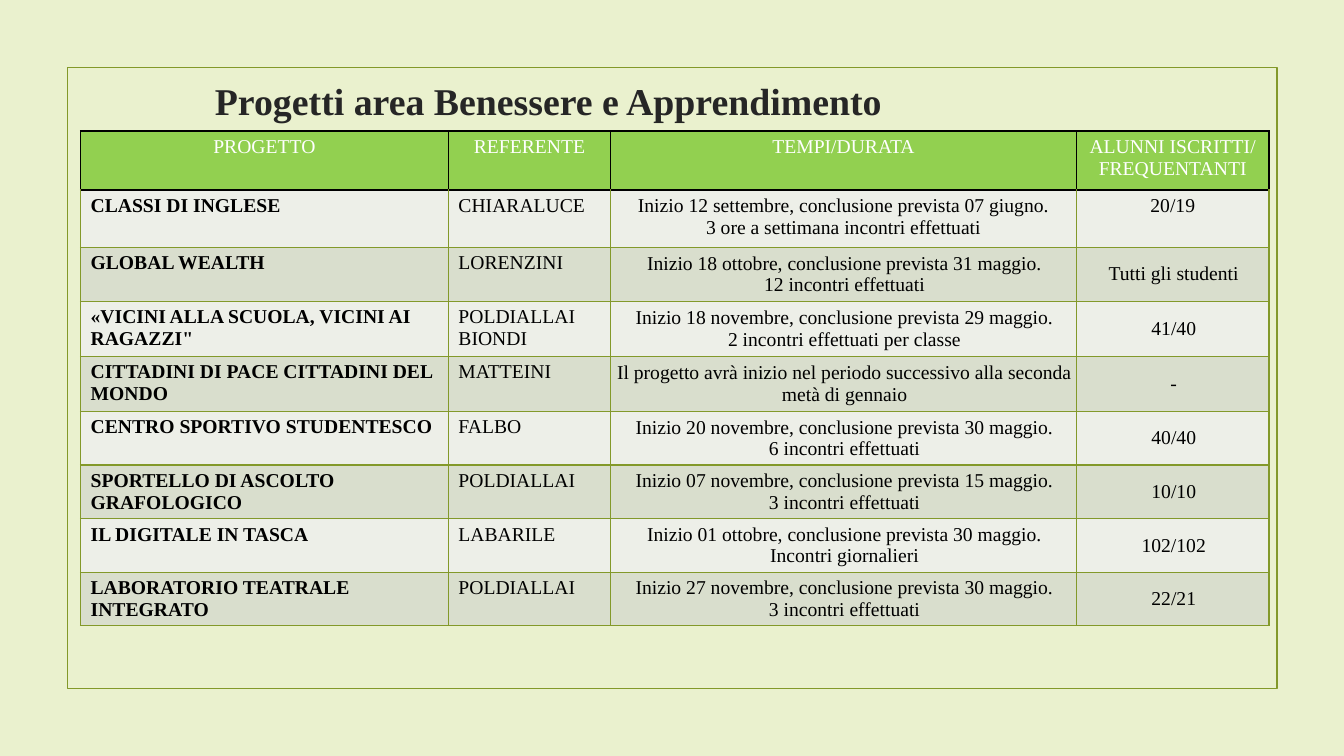
from pptx import Presentation
from pptx import util as u
from pptx.dml import color
from pptx.enum import shapes, text
from pptx.oxml import parse_xml
from pptx.oxml.ns import nsdecls

FONT = "Times New Roman"
GREEN, BLACK, WHITE = "83992A", "000000", "FFFFFF"
HEADER_FILL, BAND_FILLS = "92D050", ("EDEFE8", "D9DECD")
COLUMN_WIDTHS = (9.27, 4.09, 11.74, 4.85)
ROW_HEIGHTS = (1.49, 1.44, 1.36, 1.39, 1.39, 1.35, 1.35, 1.35, 1.35)
HEADERS = ("PROGETTO", "REFERENTE", "TEMPI/DURATA", "ALUNNI ISCRITTI/\nFREQUENTANTI")
PROJECTS = (
    ("CLASSI DI INGLESE", "CHIARALUCE",
     "Inizio 12 settembre, conclusione prevista 07 giugno.\n3 ore a settimana incontri effettuati", "20/19"),
    ("GLOBAL WEALTH", "LORENZINI",
     "Inizio 18 ottobre, conclusione prevista 31 maggio.\n12 incontri effettuati", "Tutti gli studenti"),
    ("«VICINI ALLA SCUOLA, VICINI AI RAGAZZI\"", "POLDIALLAI\nBIONDI",
     "Inizio 18 novembre, conclusione prevista 29 maggio.\n2 incontri effettuati per classe", "41/40"),
    ("CITTADINI DI PACE CITTADINI DEL MONDO", "MATTEINI",
     "Il progetto avrà inizio nel periodo successivo alla seconda metà di gennaio", "-"),
    ("CENTRO SPORTIVO STUDENTESCO", "FALBO",
     "Inizio 20 novembre, conclusione prevista 30 maggio.\n6 incontri effettuati", "40/40"),
    ("SPORTELLO DI ASCOLTO GRAFOLOGICO", "POLDIALLAI",
     "Inizio 07 novembre, conclusione prevista 15 maggio.\n3 incontri effettuati", "10/10"),
    ("IL DIGITALE IN TASCA", "LABARILE",
     "Inizio 01 ottobre, conclusione prevista 30 maggio. Incontri giornalieri", "102/102"),
    ("LABORATORIO TEATRALE INTEGRATO", "POLDIALLAI",
     "Inizio 27 novembre, conclusione prevista 30 maggio.\n3 incontri effettuati", "22/21"),
)


def rgb(hex_color):
    return color.RGBColor.from_string(hex_color)


def format_text(text_frame, size, hex_color, bold, centered):
    for paragraph in text_frame.paragraphs:
        paragraph.alignment = text.PP_ALIGN.CENTER if centered else text.PP_ALIGN.LEFT
        for run in paragraph.runs:
            run.font.name = FONT
            run.font.size = u.Pt(size)
            run.font.bold = bold
            run.font.color.rgb = rgb(hex_color)


def set_borders(cell, hex_color, top_color):
    """Draw 1 pt borders; they must precede the fill in the cell properties."""
    properties = cell._tc.get_or_add_tcPr()
    for position, side in enumerate(("lnL", "lnR", "lnT", "lnB")):
        side_color = top_color if side == "lnT" else hex_color
        properties.insert(position, parse_xml(
            f'<a:{side} {nsdecls("a")} w="12700"><a:solidFill>'
            f'<a:srgbClr val="{side_color}"/></a:solidFill></a:{side}>'))


def add_frame(slide, left, top, width, height):
    frame = slide.shapes.add_shape(
        shapes.MSO_SHAPE.RECTANGLE, u.Cm(left), u.Cm(top), u.Cm(width), u.Cm(height))
    frame.shadow.inherit = False
    frame.fill.background()
    frame.line.color.rgb = rgb(GREEN)
    frame.line.width = u.Pt(1.25)


def add_title(slide, left, top, width, height):
    title = slide.shapes.title
    title.left, title.top = u.Cm(left), u.Cm(top)
    title.width, title.height = u.Cm(width), u.Cm(height)
    title.text_frame.text = "Progetti area Benessere e Apprendimento"
    title.text_frame.vertical_anchor = text.MSO_ANCHOR.MIDDLE
    format_text(title.text_frame, 27, "262626", True, True)


def fill_cell(cell, content, row, column):
    is_header = row == 0
    cell.text_frame.text = content
    cell.fill.solid()
    cell.fill.fore_color.rgb = rgb(HEADER_FILL if is_header else BAND_FILLS[(row - 1) % 2])
    set_borders(cell, BLACK if is_header else GREEN, BLACK if row <= 1 else GREEN)
    format_text(cell.text_frame, 14, WHITE if is_header else BLACK,
                bold=not is_header and column == 0, centered=is_header or column >= 2)
    if row >= 2 and column >= 2:
        cell.vertical_anchor = text.MSO_ANCHOR.MIDDLE
        cell.margin_left, cell.margin_right = u.Cm(0.1), u.Cm(0.05)


def add_project_table(slide, left, top):
    rows = (HEADERS, *PROJECTS)
    table = slide.shapes.add_table(
        len(rows), len(HEADERS), u.Cm(left), u.Cm(top),
        u.Cm(sum(COLUMN_WIDTHS)), u.Cm(sum(ROW_HEIGHTS))).table
    for column, width in zip(table.columns, COLUMN_WIDTHS):
        column.width = u.Cm(width)
    for row, height in zip(table.rows, ROW_HEIGHTS):
        row.height = u.Cm(height)
    for row, contents in enumerate(rows):
        for column, content in enumerate(contents):
            fill_cell(table.cell(row, column), content, row, column)


def main():
    presentation = Presentation()
    presentation.slide_width, presentation.slide_height = u.Cm(33.87), u.Cm(19.05)
    slide = presentation.slides.add_slide(presentation.slide_layouts[5])
    slide.background.fill.solid()
    slide.background.fill.fore_color.rgb = rgb("EAF1CE")
    add_frame(slide, 1.7, 1.7, 30.48, 15.65)
    add_title(slide, 1.88, 1.78, 23.88, 1.5)
    add_project_table(slide, 2.03, 3.3)
    presentation.save("out.pptx")


if __name__ == "__main__":
    main()
